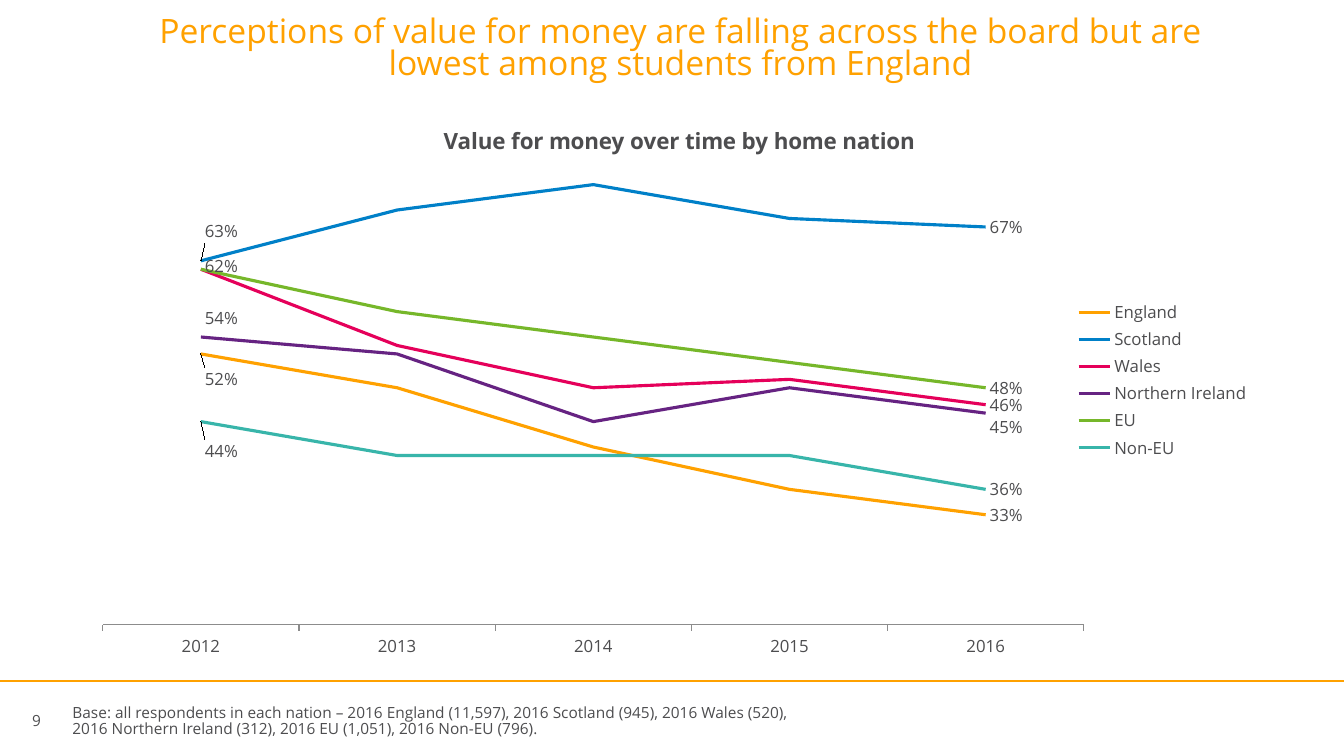
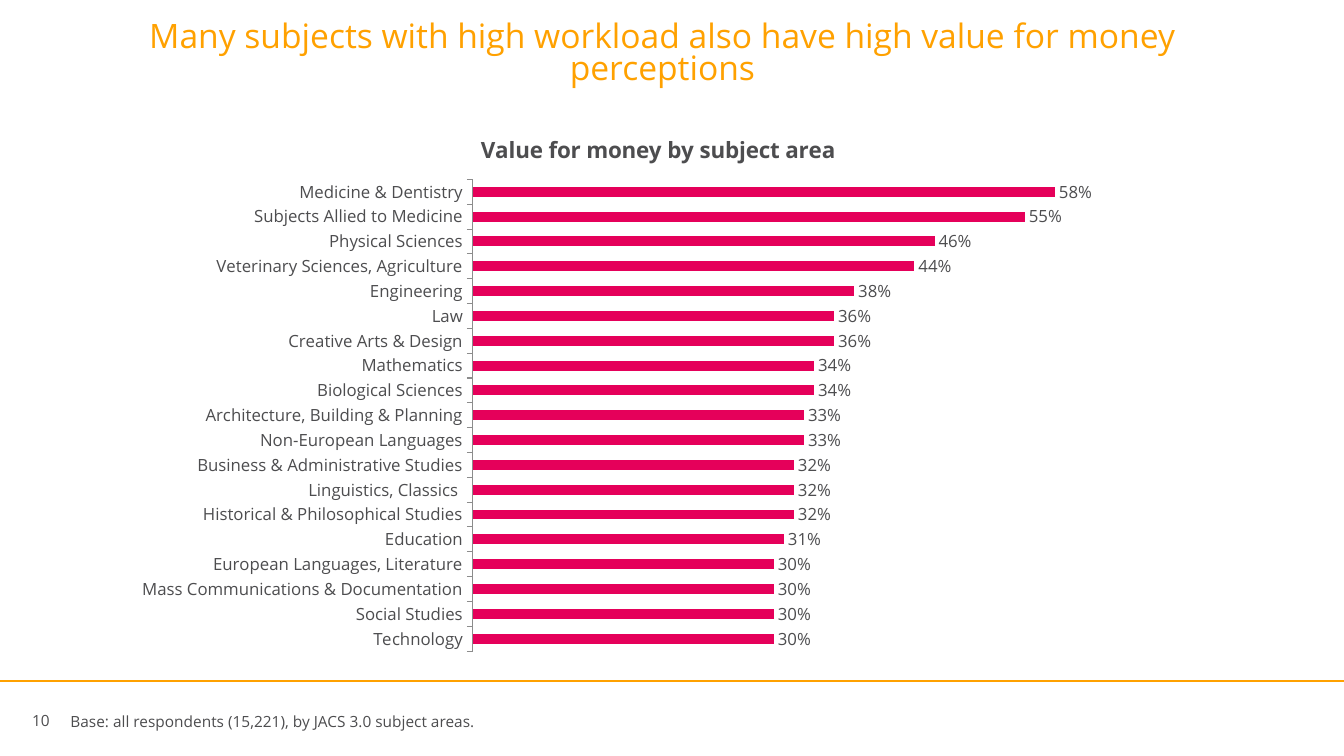
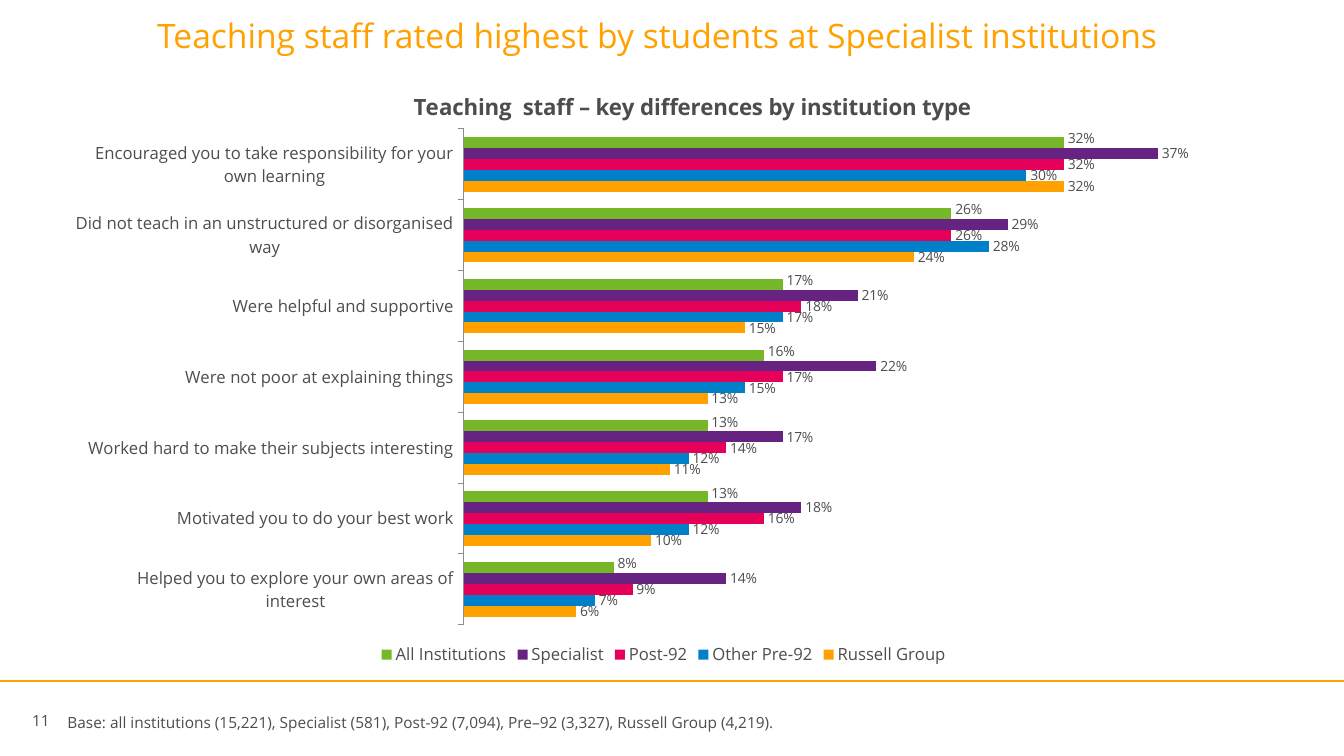
from dataclasses import dataclass

from pptx import Presentation
from pptx.chart.data import CategoryChartData
from pptx.dml.color import RGBColor
from pptx.enum.chart import XL_CHART_TYPE, XL_LABEL_POSITION, XL_LEGEND_POSITION, XL_TICK_LABEL_POSITION, XL_TICK_MARK
from pptx.enum.shapes import MSO_CONNECTOR
from pptx.enum.text import MSO_ANCHOR, MSO_AUTO_SIZE, PP_ALIGN
from pptx.oxml import parse_xml
from pptx.oxml.ns import nsdecls, qn
from pptx.util import Inches, Pt


@dataclass(frozen=True)
class Theme:
    font: str = "Open Sans"
    text: str = "4D4D4F"
    axis: str = "8C8C8C"
    orange: str = "FFA100"
    blue: str = "0080C8"
    pink: str = "E5005A"
    purple: str = "662382"
    green: str = "76B72A"
    teal: str = "38B5AA"
    title: int = 24
    chart_title: int = 16
    label: int = 12
    small: int = 10
    note: int = 11


T = Theme()


def rgb(value):
    return RGBColor.from_string(value)


def style_font(font, size, color=T.text, bold=False):
    for name, value in {"name": T.font, "size": Pt(size), "bold": bold}.items():
        setattr(font, name, value)
    font.color.rgb = rgb(color)


# Shared slide frame
def add_text(slide, box, lines, anchor=MSO_ANCHOR.TOP):
    tf = slide.shapes.add_textbox(*map(Inches, box)).text_frame
    tf.word_wrap = True
    tf.vertical_anchor = anchor
    for i, line in enumerate(lines):
        p = tf.paragraphs[0] if i == 0 else tf.add_paragraph()
        if i:
            p.line_spacing = 0.85
        r = p.add_run()
        r.text = line
        style_font(r.font, T.note)


def add_title(slide, box, text, spacing):
    sp = slide.shapes.title
    for name, value in zip(("left", "top", "width", "height"), box):
        setattr(sp, name, Inches(value))
    tf = sp.text_frame
    for name, value in {"word_wrap": True, "auto_size": MSO_AUTO_SIZE.NONE,
                        "vertical_anchor": MSO_ANCHOR.TOP}.items():
        setattr(tf, name, value)
    p = tf.paragraphs[0]
    p.alignment = PP_ALIGN.CENTER
    p.line_spacing = spacing
    r = p.add_run()
    r.text = text
    style_font(r.font, T.title, T.orange)


def add_frame(prs, number, title, title_at, note, note_box, spacing=0.81):
    slide = prs.slides.add_slide(prs.slide_layouts[5])
    rule = slide.shapes.add_connector(
        MSO_CONNECTOR.STRAIGHT, 0, Inches(6.76), prs.slide_width, Inches(6.76))
    rule.line.color.rgb = rgb(T.orange)
    rule.line.width = Pt(1.5)
    rule._element.spPr.append(parse_xml(f"<a:effectLst {nsdecls('a')}/>"))
    add_text(slide, (0.22, 6.96, 0.43, 0.38), [str(number)], MSO_ANCHOR.MIDDLE)
    add_title(slide, (*title_at, 11.5, 0.71), title, spacing)
    add_text(slide, note_box, note)
    return slide


# Chart parts
def set_layout(parent, index, values, inner=False, edge=True):
    """Place a chart part; values are fractions of the chart."""
    old = parent.find(qn("c:layout"))
    if old is not None:
        parent.remove(old)
    parts = ['<c:layoutTarget val="inner"/>'] if inner else []
    if edge:
        parts += ['<c:xMode val="edge"/>', '<c:yMode val="edge"/>']
    parts += [f'<c:{k} val="{v:.4f}"/>' for k, v in zip("xywh", values)]
    parent.insert(index, parse_xml(
        f"<c:layout {nsdecls('c')}><c:manualLayout>{''.join(parts)}"
        "</c:manualLayout></c:layout>"))


def add_chart(slide, kind, box, title, title_at, plot_box, cats, series,
              limits, legend=None):
    """Title and plot positions are inches from the chart's corner."""
    data = CategoryChartData(number_format="0%")
    data.categories = cats
    for name, _, values in series:
        data.add_series(name, [v / 100 for v in values])
    chart = slide.shapes.add_chart(kind, *map(Inches, box), data).chart
    style_font(chart.font, T.small)
    size = box[2:] * 2

    # Title and plot area
    chart.has_title = True
    p = chart.chart_title.text_frame.paragraphs[0]
    r = p.add_run()
    r.text = title
    style_font(r.font, T.chart_title, bold=True)
    heading = chart.element.xpath("c:chart/c:title")[0]
    set_layout(heading, 1, [v / s for v, s in zip(title_at, size)])
    heading.find(qn("c:overlay")).set("val", "1")
    area = chart.element.xpath("c:chart/c:plotArea")[0]
    set_layout(area, 0, [v / s for v, s in zip(plot_box, size)], inner=True)

    # Axes
    cat, val = chart.category_axis, chart.value_axis
    for name, value in {"major_tick_mark": XL_TICK_MARK.OUTSIDE,
                        "minor_tick_mark": XL_TICK_MARK.NONE,
                        "tick_label_position": XL_TICK_LABEL_POSITION.LOW,
                        "has_major_gridlines": False}.items():
        setattr(cat, name, value)
    style_font(cat.tick_labels.font, T.label)
    cat.format.line.color.rgb = rgb(T.axis)
    cat.format.line.width = Pt(0.75)
    val.minimum_scale, val.maximum_scale = limits
    val.has_major_gridlines = False
    val.visible = False

    # Legend
    chart.has_legend = legend is not None
    if legend is not None:
        chart.legend.position = legend
        chart.legend.include_in_layout = False
        style_font(chart.legend.font, T.label)
    chart.plots[0].vary_by_categories = False
    return chart


def label_point(ser, index, position, size, shift, height):
    """Label one point, moved down by shift inches."""
    label = ser.points[index].data_label
    style_font(label.font, size)
    label.position = position
    if shift:
        d = ser._element.xpath(f"c:dLbls/c:dLbl[c:idx/@val='{index}']")[0]
        set_layout(d, 1, (0, shift / height), edge=False)


def add_line_chart(slide, box, series, shifts, **parts):
    chart = add_chart(slide, XL_CHART_TYPE.LINE, box, series=series, **parts)
    for ser, (name, color, _) in zip(chart.plots[0].series, series):
        ser.smooth = False
        ser.format.line.color.rgb = rgb(color)
        ser.format.line.width = Pt(2.25)
        ser.data_labels.show_value = False
        for index, shift in shifts[name].items():
            label_point(ser, index, XL_LABEL_POSITION.RIGHT, T.label, shift, box[3])


def add_bar_chart(slide, box, series, label_size, shifts=None, **parts):
    chart = add_chart(slide, XL_CHART_TYPE.BAR_CLUSTERED, box, series=series, **parts)
    plot = chart.plots[0]
    plot.gap_width, plot.overlap = 150, 0
    for ser, (name, color, values) in zip(plot.series, series):
        ser.format.fill.solid()
        ser.format.fill.fore_color.rgb = rgb(color)
        labels = ser.data_labels
        for key, value in {"show_value": True, "number_format": "0%",
                           "number_format_is_linked": False,
                           "position": XL_LABEL_POSITION.OUTSIDE_END}.items():
            setattr(labels, key, value)
        style_font(labels.font, label_size)
        if name in (shifts or {}):
            for index in range(len(values)):
                label_point(ser, index, XL_LABEL_POSITION.OUTSIDE_END,
                            label_size, shifts[name], box[3])


# Slides
def nation_slide(prs):
    slide = add_frame(
        prs, 9,
        "Perceptions of value for money are falling across the board but are "
        "lowest among students from England", (1, 0.12),
        ["Base: all respondents in each nation – 2016 England (11,597), "
         "2016 Scotland (945), 2016 Wales (520),",
         "2016 Northern Ireland (312), 2016 EU (1,051), 2016 Non-EU (796)."],
        (0.62, 6.93, 9.38, 0.47))
    add_line_chart(
        slide, (0.97, 1, 11.53, 5.54),
        title="Value for money over time by home nation",
        title_at=(3.39, 0.19), plot_box=(0.05, 0.16, 9.73, 5.04),
        cats=[str(year) for year in range(2012, 2017)],
        series=[
            ("England", T.orange, (52, 48, 41, 36, 33)),
            ("Scotland", T.blue, (63, 69, 72, 68, 67)),
            ("Wales", T.pink, (62, 53, 48, 49, 46)),
            ("Northern Ireland", T.purple, (54, 52, 44, 48, 45)),
            ("EU", T.green, (62, 57, 54, 51, 48)),
            ("Non-EU", T.teal, (44, 40, 40, 40, 36)),
        ],
        shifts={
            "England": {0: 0.25, 4: 0},
            "Scotland": {0: -0.29, 4: 0},
            "Wales": {0: -0.03, 4: 0},
            "Northern Ireland": {0: -0.19, 4: 0.14},
            "EU": {4: 0},
            "Non-EU": {0: 0.29, 4: 0},
        },
        limits=(0.2, 0.8), legend=XL_LEGEND_POSITION.RIGHT)


def subject_slide(prs):
    slide = add_frame(
        prs, 10,
        "Many subjects with high workload also have high value for money perceptions",
        (0.82, 0.17),
        ["Base: all respondents (15,221), by JACS 3.0 subject areas."],
        (0.6, 7.02, 6.67, 0.29))
    subjects = {
        "Technology": 30,
        "Social Studies": 30,
        "Mass Communications & Documentation": 30,
        "European Languages, Literature": 30,
        "Education": 31,
        "Historical & Philosophical Studies": 32,
        "Linguistics, Classics ": 32,
        "Business & Administrative Studies": 32,
        "Non-European Languages": 33,
        "Architecture, Building & Planning": 33,
        "Biological Sciences": 34,
        "Mathematics": 34,
        "Creative Arts & Design": 36,
        "Law": 36,
        "Engineering": 38,
        "Veterinary Sciences, Agriculture": 44,
        "Physical Sciences": 46,
        "Subjects Allied to Medicine": 55,
        "Medicine & Dentistry": 58,
    }
    add_bar_chart(
        slide, (1.19, 1.11, 10.68, 5.44),
        title="Value for money by subject area",
        title_at=(3.54, 0.17), plot_box=(3.5, 0.67, 6.97, 4.68),
        cats=list(subjects),
        series=[("Series 1", T.pink, list(subjects.values()))],
        label_size=T.label, limits=(0, 0.7))


def teaching_slide(prs):
    slide = add_frame(
        prs, 11,
        "Teaching staff rated highest by students at Specialist institutions",
        (0.77, 0.14),
        ["Base: all institutions (15,221), Specialist (581), Post-92 (7,094), "
         "Pre–92 (3,327), Russell Group (4,219)."],
        (0.57, 7.03, 7.84, 0.29), spacing=0.9)
    add_bar_chart(
        slide, (0.75, 0.85, 11.58, 5.8),
        title="Teaching  staff – key differences by institution type",
        title_at=(3.25, 0), plot_box=(3.79, 0.43, 7.5, 4.92),
        cats=[
            "Helped you to explore your own areas of interest",
            "Motivated you to do your best work",
            "Worked hard to make their subjects interesting",
            "Were not poor at explaining things",
            "Were helpful and supportive",
            "Did not teach in an unstructured or disorganised way",
            "Encouraged you to take responsibility for your own learning",
        ],
        series=[
            ("Russell Group", T.orange, (6, 10, 11, 13, 15, 24, 32)),
            ("Other Pre-92", T.blue, (7, 12, 12, 15, 17, 28, 30)),
            ("Post-92", T.pink, (9, 16, 14, 17, 18, 26, 32)),
            ("Specialist", T.purple, (14, 18, 17, 22, 21, 29, 37)),
            ("All Institutions", T.green, (8, 13, 13, 16, 17, 26, 32)),
        ],
        label_size=T.small, shifts={"All Institutions": -0.04},
        limits=(0, 0.4), legend=XL_LEGEND_POSITION.BOTTOM)


def main():
    prs = Presentation()
    prs.slide_width, prs.slide_height = Inches(13.33), Inches(7.5)
    for build in (nation_slide, subject_slide, teaching_slide):
        build(prs)
    prs.save("out.pptx")


if __name__ == "__main__":
    main()
